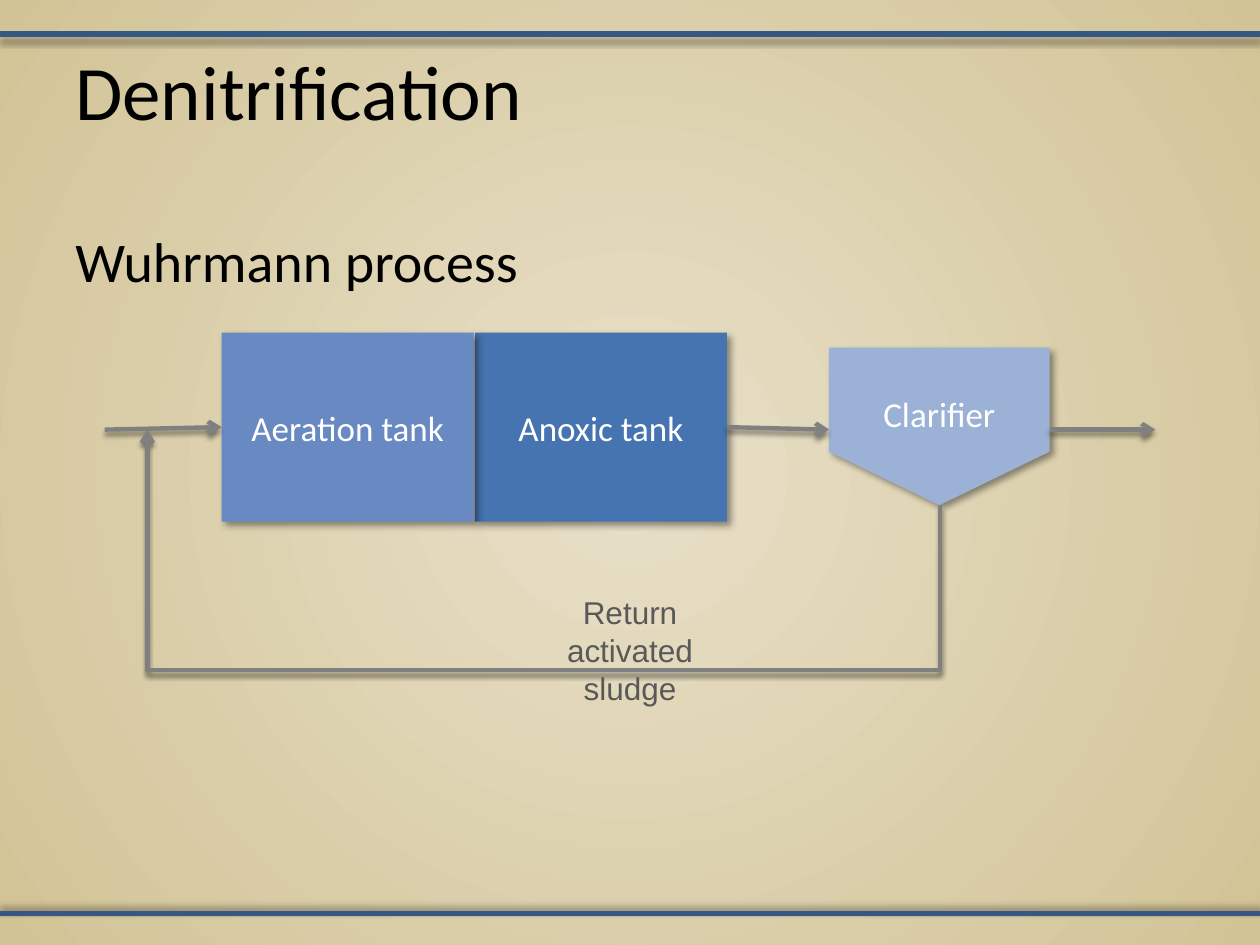
import pptx
import pptx.util
import pptx.dml.color
import pptx.enum.shapes
import pptx.enum.text
import pptx.oxml
import pptx.oxml.ns

Kind = pptx.enum.shapes.MSO_SHAPE
Link = pptx.enum.shapes.MSO_CONNECTOR
Align = pptx.enum.text.PP_ALIGN
Anchor = pptx.enum.text.MSO_ANCHOR
qn = pptx.oxml.ns.qn


def tint(code):
    return pptx.dml.color.RGBColor.from_string(code)


def node(body):
    """Make one drawing element from its tag and the rest."""
    head, rest = body.split(" ", 1)
    return pptx.oxml.parse_xml(f"<{head} {pptx.oxml.ns.nsdecls('a')} {rest}")


class Page:
    """Style and current slide; lengths are cells of a 100 x 75 grid."""

    cols = 100
    font = "Calibri"
    ink, pale, gray, navy = "000000", "FFFFFF", "808080", "355784"

    def __init__(self, deck):
        self.cell = deck.slide_width / self.cols
        self.slide = deck.slides.add_slide(deck.slide_layouts[6])
        self.shapes = self.slide.shapes

    def grid(self, *cells):
        return [pptx.util.Emu(round(c * self.cell)) for c in cells]

    def ground(self, inner, outer):
        fill = self.slide.background.fill
        fill.gradient()
        for stop, code in zip(fill.gradient_stops, (inner, outer)):
            stop.color.rgb = tint(code)
        grad = self.slide.element.find(".//" + qn("a:gradFill"))
        grad.replace(grad.find(qn("a:lin")), node(
            'a:path path="circle"><a:fillToRect l="50000" t="50000" '
            'r="50000" b="50000"/></a:path>'))

    def shade(self, item, alpha, blur, dist, angle):
        props = item._element.spPr
        old = props.find(qn("a:effectLst"))
        if old is not None:
            props.remove(old)
        blur, dist = pptx.util.Pt(blur), pptx.util.Pt(dist)
        props.append(node(
            f'a:effectLst ><a:outerShdw blurRad="{blur}" dist="{dist}" '
            f'dir="{angle * 60000}" rotWithShape="0"><a:srgbClr val="000000">'
            f'<a:alpha val="{alpha * 1000}"/></a:srgbClr></a:outerShdw>'
            '</a:effectLst>'))

    def say(self, frame, words, size, code, font=None, align=Align.LEFT):
        frame.word_wrap = True
        par = frame.paragraphs[0]
        par.alignment = align
        run = par.add_run()
        run.text = words
        run.font.size = pptx.util.Pt(size)
        run.font.name = font or self.font
        run.font.color.rgb = tint(code)

    def text(self, box, words, size, code=ink, inset=1, **style):
        frame = self.shapes.add_textbox(*self.grid(*box)).text_frame
        frame.margin_left, frame.margin_right = self.grid(inset, inset)
        self.say(frame, words, size, code, **style)

    def tank(self, box, words, fill, kind=Kind.RECTANGLE):
        tank = self.shapes.add_shape(kind, *self.grid(*box))
        tank.shadow.inherit = False
        tank.fill.solid()
        tank.fill.fore_color.rgb = tint(fill)
        tank.line.fill.background()
        self.shade(tank, 40, 4, 3, 45)
        tank.text_frame.vertical_anchor = Anchor.MIDDLE
        self.say(tank.text_frame, words, 20, self.pale, align=Align.CENTER)
        return tank

    def line(self, ends, code, width, kind=Link.STRAIGHT):
        line = self.shapes.add_connector(kind, *self.grid(*ends))
        line.line.color.rgb = tint(code)
        line.line.width = pptx.util.Pt(width)
        return line

    def rule(self, row, angle):
        self.shade(self.line((0, row, self.cols, row), self.navy, 3),
                   40, 4, 3, angle)

    def flow(self, ends, kind=Link.STRAIGHT):
        flow = self.line(ends, self.gray, 2.5, kind)
        flow.line._get_or_add_ln().append(node('a:tailEnd type="arrow"/>'))
        self.shade(flow, 45, 3, 2.4, 90)
        return flow

    def loop(self, start, end, low):
        """Arrow that drops from start to row low, runs left, rises to end."""
        (x1, y1), (x2, y2) = start, end
        midx, midy = (x1 + x2) / 2, (y1 + y2) / 2
        tall, wide = (y1 - y2) / 2, (x1 - x2) / 2
        # Laid out on its side, then turned a quarter
        loop = self.flow((midx + tall, midy - wide, midx - tall, midy + wide),
                         Link.ELBOW)
        props = loop._element.spPr
        props.find(qn("a:xfrm")).set("rot", "5400000")
        drop = round((y1 - low) / (y1 - y2) * 100000)
        props.replace(props.find(qn("a:prstGeom")), node(
            'a:prstGeom prst="bentConnector4"><a:avLst>'
            f'<a:gd name="adj1" fmla="val {drop}"/>'
            '<a:gd name="adj2" fmla="val 100000"/></a:avLst></a:prstGeom>'))


def main():
    deck = pptx.Presentation()
    deck.slide_width = pptx.util.Inches(10)
    deck.slide_height = pptx.util.Inches(7.5)
    page = Page(deck)

    # Ground and rules
    page.ground("E8E0C8", "D2C396")
    page.rule(2.7, 90)
    page.rule(72.5, 270)

    # Headings
    page.text((5, 3, 90, 12.5), "Denitrification", 44)
    page.text((5, 17.5, 45, 6.7), "Wuhrmann process", 32)

    # Tanks
    anox = page.tank((37.7, 26.4, 20, 15), "Anoxic tank", "4674B0")
    clear = page.tank((68.3, 25.1, 12.5, 17.5), "Clarifier", "9BB1D6",
                      Kind.PENTAGON)
    clear.rotation = 90
    clear.adjustments[0] = 0.34
    clear.text_frame._txBody.bodyPr.set("vert", "vert270")
    air = page.tank((17.6, 26.4, 20, 15), "Aeration tank", "6989C2")

    # Flow from inlet to outlet
    mid = 34.1
    page.flow((8.3, mid, 17.6, 33.9)).end_connect(air, 1)
    page.flow((57.7, 33.9, 65.8, mid)).begin_connect(anox, 3)
    page.flow((83.3, mid, 91.7, mid))

    # Sludge return
    page.loop((74.6, 40.1), (11.7, mid), 53.2)
    page.text((44.4, 46.6, 11.2, 10.1), "Return activated sludge", 18,
              "595959", inset=0.1, font="Arial", align=Align.CENTER)

    deck.save("out.pptx")


if __name__ == "__main__":
    main()
